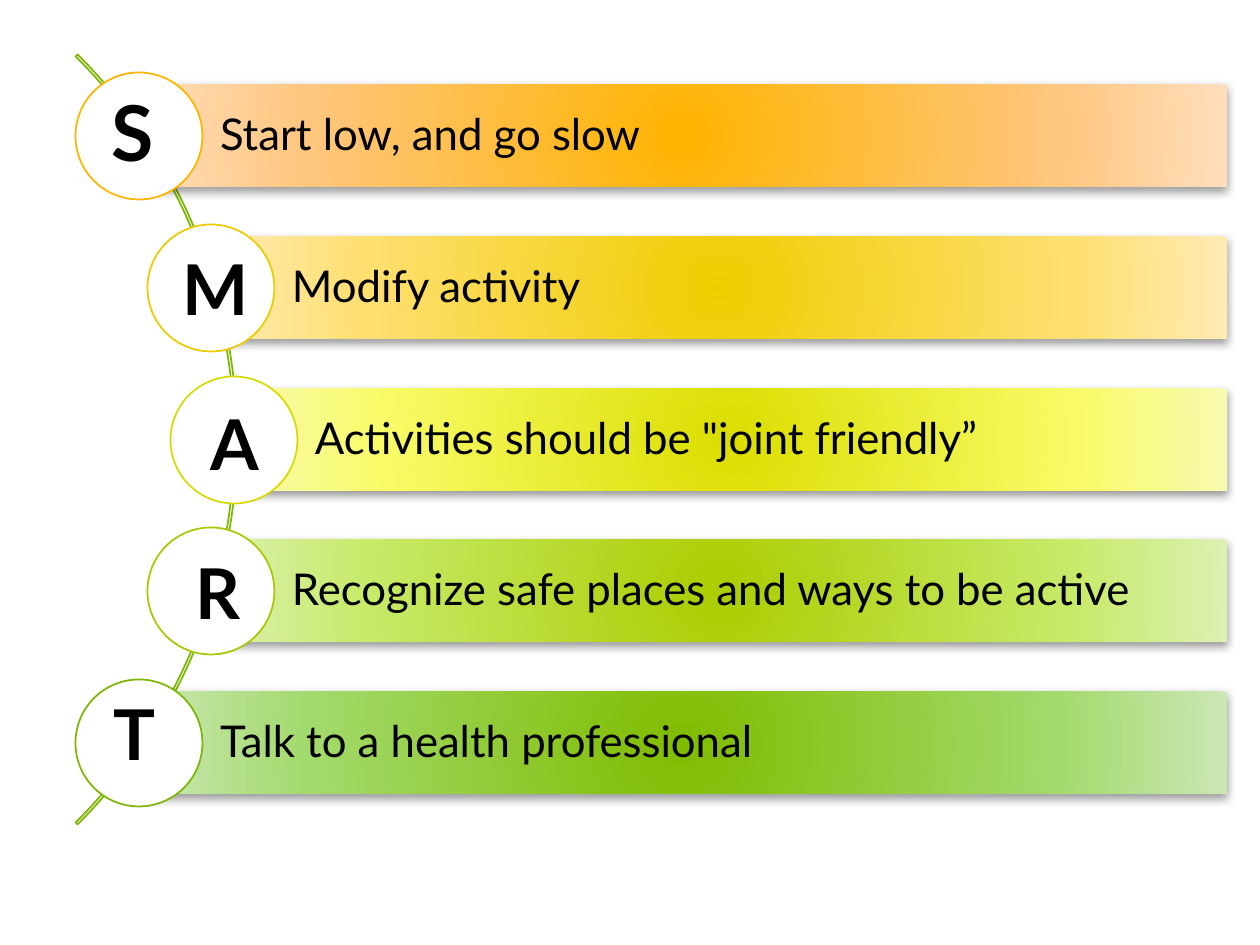
from lxml.etree import SubElement
from pptx import Presentation
from pptx.dml.color import RGBColor
from pptx.enum.shapes import MSO_SHAPE as Shape
from pptx.enum.text import MSO_ANCHOR as Anchor, MSO_AUTO_SIZE as AutoSize, PP_ALIGN as Align
from pptx.oxml import parse_xml
from pptx.oxml.ns import nsdecls, qn
from pptx.util import Emu, Pt

PX = 914400 / 126

ROWS = [
    ("Start low, and go slow", 139, "FFB400", ["FFB400", "FFC67F", "FFDEBD"]),
    ("Modify activity", 211, "ECCB02", ["EECD00", "FFDF70", "FFEBB4"]),
    ("Activities should be \"joint friendly”", 234, "D7DA04", ["DBDD00", "F8FB66", "F8FAB0"]),
    ("Recognize safe places and ways to be active", 211, "A8C805", ["ABCD00", "C7EA69", "DDF0B2"]),
    ("Talk to a health professional", 139, "7EB606", ["80BC00", "A3DA6D", "CBE7B4"]),
]
LETTERS = [
    ("S", 99, 78, 89, 106, 44, True),
    ("M", 170, 239, 87, 97, 40, False),
    ("A", 198, 394, 68, 97, 40, False),
    ("R", 183, 543, 66, 97, 40, False),
    ("T", 101, 684, 60, 97, 40, False),
]
BAR_RIGHT, BAR_HEIGHT, CIRCLE_SIZE = 1227, 102, 127
FIRST_CENTER, ROW_STEP = 136, 151.75


def color(value):
    return RGBColor.from_string(value)


def px(*lengths):
    return [Emu(round(length * PX)) for length in lengths]


class SlideBuilder:
    font = "Lato"
    ink = "000000"

    def __init__(self, page):
        self.page = page

    def shape(self, kind, left, top, width, height, fill=None, line=None):
        shape = self.page.shapes.add_shape(kind, *px(left, top, width, height))
        shape.shadow.inherit = False
        if fill:
            shape.fill.solid()
            shape.fill.fore_color.rgb = color(fill)
        else:
            shape.fill.background()
        if line:
            shape.line.color.rgb = color(line)
            shape.line.width = Pt(1)
        else:
            shape.line.fill.background()
        return shape

    def arc(self, left, top, size, line):
        arc = self.shape(Shape.BLOCK_ARC, left, top, size, size, line=line)
        for index, value in enumerate((189, 27, 0.0025)):
            arc.adjustments[index] = value

    def glow(self, shape, shades):
        stops = "".join(
            f'<a:gs pos="{position}"><a:srgbClr val="{shade}"/></a:gs>'
            for position, shade in zip((0, 69000, 100000), shades)
        )
        gradient = parse_xml(
            f'<a:gradFill {nsdecls("a")} rotWithShape="1"><a:gsLst>{stops}</a:gsLst>'
            '<a:path path="circle"><a:fillToRect l="100000" t="100000" r="100000" b="100000"/>'
            "</a:path></a:gradFill>"
        )
        properties = shape.element.spPr
        properties.replace(properties.find(qn("a:noFill")), gradient)

    def cast_shadow(self, shape):
        effects = shape.element.spPr.find(qn("a:effectLst"))
        shadow = SubElement(effects, qn("a:outerShdw"), blurRad=str(Pt(5)), dist=str(Pt(2)),
                            dir="5400000", rotWithShape="0")
        tint = SubElement(shadow, qn("a:srgbClr"), val=self.ink)
        SubElement(tint, qn("a:alpha"), val="40000")

    def label(self, frame, text, size, bold=False):
        para = frame.paragraphs[0]
        para.text = text
        para.alignment = Align.LEFT
        para.font.name = self.font
        para.font.size = Pt(size)
        para.font.bold = bold
        para.font.color.rgb = color(self.ink)
        return para

    def bar(self, text, left, top, shades):
        bar = self.shape(Shape.RECTANGLE, left, top, BAR_RIGHT - left, BAR_HEIGHT)
        self.glow(bar, shades)
        self.cast_shadow(bar)
        frame = bar.text_frame
        frame.word_wrap = True
        frame.vertical_anchor = Anchor.MIDDLE
        frame.margin_left, frame.margin_top, frame.margin_right, frame.margin_bottom = px(81, 9, 9, 9)
        self.label(frame, text, 25).line_spacing = 0.9

    def circle(self, center_x, center_y, line):
        radius = CIRCLE_SIZE / 2
        self.shape(Shape.OVAL, center_x - radius, center_y - radius,
                   CIRCLE_SIZE, CIRCLE_SIZE, "FFFFFF", line)

    def letter(self, text, left, top, width, height, size, wrap):
        box = self.page.shapes.add_textbox(*px(left, top, width, height))
        box.text_frame.word_wrap = wrap
        box.text_frame.auto_size = AutoSize.SHAPE_TO_FIT_TEXT
        self.label(box.text_frame, text, size, True)


def main():
    deck = Presentation()
    deck.slide_width, deck.slide_height = px(1260, 945)
    builder = SlideBuilder(deck.slides.add_slide(deck.slide_layouts[6]))
    builder.arc(-852, -105, 1089, "7EB606")
    for index, (text, left, line, shades) in enumerate(ROWS):
        center = FIRST_CENTER + round(index * ROW_STEP)
        builder.bar(text, left, center - BAR_HEIGHT // 2, shades)
        builder.circle(left, center, line)
    for letter in LETTERS:
        builder.letter(*letter)
    deck.save("out.pptx")


if __name__ == "__main__":
    main()
